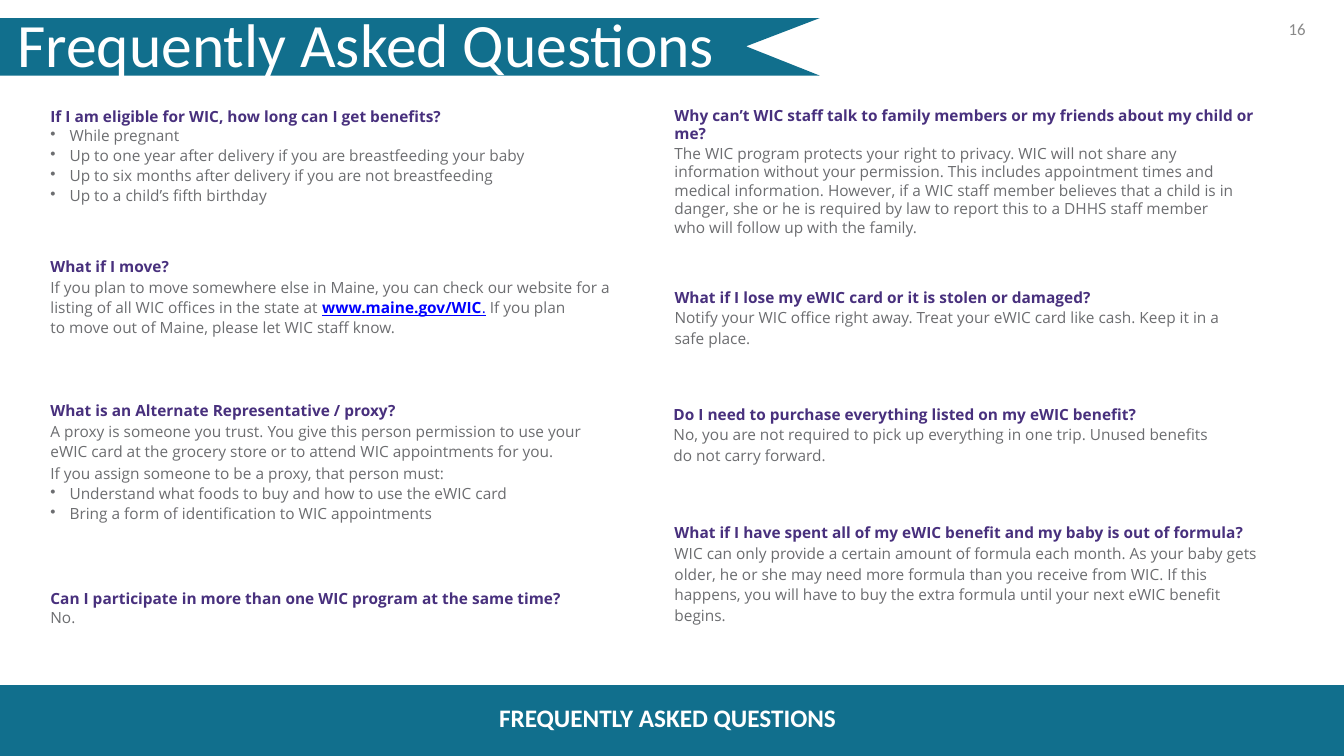
import pptx
import pptx.util
import pptx.dml.color
import pptx.enum.text
from lxml import etree
from dataclasses import dataclass

Inches, Pt = pptx.util.Inches, pptx.util.Pt


@dataclass(frozen=True)
class Theme:
    teal: str = "116F8D"
    purple: str = "48307D"
    gray: str = "6C6D70"
    number_gray: str = "898989"
    white: str = "FFFFFF"
    link_blue: str = "0000FF"
    display_font: str = "Calibri"
    text_font: str = "Open Sans"
    title_size: float = 44
    footer_size: float = 18
    number_size: float = 12
    text_size: float = 11


THEME = Theme()
LINK = "www.maine.gov/WIC"
HEADING, BODY, BULLET = "heading", "body", "bullet"

# Each answer: left, top, width, height, top inset, then paragraphs of
# (kind, space before, line spacing, text); \v marks a line break.
ANSWERS = [
    (0.49, 1.03, 4.96, 1.01, 0.03, [
        (HEADING, 1.9, None, "If I am eligible for WIC, how long can I get benefits?"),
        (BULLET, 0.9, None, "While pregnant"),
        (BULLET, 0.9, None, "Up to one year after delivery if you are breastfeeding your baby"),
        (BULLET, 1.1, None, "Up to six months after delivery if you are not breastfeeding"),
        (BULLET, 0.9, None, "Up to a child’s fifth birthday"),
    ]),
    (0.49, 2.52, 5.72, 0.83, 0.03, [
        (HEADING, 1.9, None, "What if I move?"),
        (BODY, 0.3, Pt(14.6), "If you plan to move somewhere else in Maine, you can check our website "
                              f"for a listing of all WIC offices in the state at {LINK}. If you plan"),
        (BODY, 1.1, None, "to move out of Maine, please let WIC staff know."),
    ]),
    (0.49, 3.95, 5.7, 1.25, 0.03, [
        (HEADING, 1.9, None, "What is an Alternate Representative / proxy?"),
        (BODY, 0.5, Pt(14.4), "A proxy is someone you trust. You give this person permission to use your\v"
                              "eWIC card at the grocery store or to attend WIC appointments for you."),
        (BODY, 2.2, None, "If you assign someone to be a proxy, that person must:"),
        (BULLET, 1.6, None, "Understand what foods to buy and how to use the eWIC card"),
        (BULLET, 0.9, None, "Bring a form of identification to WIC appointments"),
    ]),
    (0.49, 5.81, 5.17, 0.42, 0.03, [
        (HEADING, 1.9, None, "Can I participate in more than one WIC program at the same time?"),
        (BODY, 0.9, None, "No."),
    ]),
    (6.68, 1.04, 5.93, 1.33, 0.01, [
        (HEADING, 1.1, None, "Why can’t WIC staff talk to family members or my friends about my child or\vme?"),
        (BODY, 0.9, None, "The WIC program protects your right to privacy. WIC will not share any\v"
                          "information without your permission. This includes appointment times and\v"
                          "medical information. However, if a WIC staff member believes that a child is in\v"
                          "danger, she or he is required by law to report this to a DHHS staff member\v"
                          "who will follow up with the family."),
    ]),
    (6.68, 2.83, 5.78, 0.63, 0.03, [
        (HEADING, 1.9, None, "What if I lose my eWIC card or it is stolen or damaged?"),
        (BODY, 0.9, None, "Notify your WIC office right away. Treat your eWIC card like cash. Keep it in a"),
        (BODY, 2, None, "safe place."),
    ]),
    (6.67, 3.99, 5.6, 0.63, 0.03, [
        (HEADING, 1.9, None, "Do I need to purchase everything listed on my eWIC benefit?"),
        (BODY, 0.9, None, "No, you are not required to pick up everything in one trip. Unused benefits"),
        (BODY, 2, None, "do not carry forward."),
    ]),
    (6.68, 5.15, 5.96, 1.06, 0.02, [
        (HEADING, 1.2, 1.12, "What if I have spent all of my eWIC benefit and my baby is out of formula?"),
        (BODY, 0, 1.12, "WIC can only provide a certain amount of formula each month. As your baby gets\v"
                        "older, he or she may need more formula than you receive from WIC. If this\v"
                        "happens, you will have to buy the extra formula until your next eWIC benefit\v"
                        "begins."),
    ]),
]

RIBBON = [(8.13, 0.75), (7.4, 0.46), (8.13, 0.18), (0, 0.18), (0, 0.75)]
FOOTER_BAND = [(13.33, 6.8), (0, 6.8), (0, 7.5), (13.33, 7.5)]


def rgb(color):
    return pptx.dml.color.RGBColor.from_string(color)


def add_outline(slide, points):
    corners = [(Inches(x), Inches(y)) for x, y in points]
    builder = slide.shapes.build_freeform(*corners[0], scale=1.0)
    builder.add_line_segments(corners[1:], close=True)
    shape = builder.convert_to_shape()
    shape.shadow.inherit = False
    shape.fill.solid()
    shape.fill.fore_color.rgb = rgb(THEME.teal)
    shape.line.fill.background()


def add_run(para, text, size, font, color, bold=False, underline=False):
    span = para.add_run()
    span.text = text
    span.font.size = Pt(size)
    span.font.name = font
    span.font.bold = bold
    span.font.underline = underline
    span.font.color.rgb = rgb(color)


def set_frame(box, top_inset=0.01):
    frame = box.text_frame
    frame.word_wrap = True
    frame.auto_size = pptx.enum.text.MSO_AUTO_SIZE.NONE
    frame.vertical_anchor = pptx.enum.text.MSO_ANCHOR.TOP
    frame.margin_left = frame.margin_right = frame.margin_bottom = 0
    frame.margin_top = Inches(top_inset)
    return frame


def set_paragraph(para, space_before, line_spacing=None, bullet=False):
    para.alignment = pptx.enum.text.PP_ALIGN.LEFT
    para.space_before = Pt(space_before)
    if line_spacing:
        para.line_spacing = line_spacing
    properties = para._p.get_or_add_pPr()
    properties.set("marL", str(Inches(0.2 if bullet else 0.01)))
    properties.set("indent", str(Inches(-0.19 if bullet else 0)))
    if bullet:
        mark = etree.SubElement(properties, pptx.oxml.ns.qn("a:buChar"))
        mark.set("char", "•")


def add_label(box, text, size, color, bold=False):
    para = set_frame(box).paragraphs[0]
    set_paragraph(para, 1)
    add_run(para, text, size, THEME.display_font, color, bold)


def add_text(para, kind, text):
    """Fill a paragraph, honouring line breaks and styling the web address."""
    size, font = THEME.text_size, THEME.text_font
    heading = kind == HEADING
    color = THEME.purple if heading else THEME.gray
    for index, line in enumerate(text.split("\v")):
        if index:
            para.add_line_break()
        before, link, after = line.partition(LINK)
        add_run(para, before, size, font, color, heading)
        if link:
            add_run(para, link, size, font, THEME.link_blue, True, True)
            add_run(para, after[0], size, font, THEME.link_blue, False, True)
            add_run(para, after[1:], size, font, color)


def add_answer(slide, left, top, width, height, inset, paragraphs):
    box = slide.shapes.add_textbox(*map(Inches, (left, top, width, height)))
    frame = set_frame(box, inset)
    for index, (kind, space_before, line_spacing, text) in enumerate(paragraphs):
        para = frame.add_paragraph() if index else frame.paragraphs[0]
        set_paragraph(para, space_before, line_spacing, kind == BULLET)
        add_text(para, kind, text)


def main():
    deck = pptx.Presentation()
    deck.slide_width, deck.slide_height = Inches(13.33), Inches(7.5)
    page = deck.slides.add_slide(deck.slide_layouts.get_by_name("Title Only"))

    add_outline(page, RIBBON)
    add_outline(page, FOOTER_BAND)

    title = page.shapes.title
    title.left, title.top, title.width, title.height = map(Inches, (0.16, 0.05, 9.8, 0.76))
    add_label(title, "Frequently Asked Questions", THEME.title_size, THEME.white)
    page.shapes._spTree.append(title._element)  # bring the title in front of the ribbon

    number = page.shapes.add_textbox(*map(Inches, (12.77, 0.18, 0.2, 0.22)))
    add_label(number, "16", THEME.number_size, THEME.number_gray)
    footer = page.shapes.add_textbox(*map(Inches, (4.94, 6.96, 3.4, 0.33)))
    add_label(footer, "FREQUENTLY ASKED QUESTIONS", THEME.footer_size, THEME.white, True)

    for answer in ANSWERS:
        add_answer(page, *answer)
    deck.save("out.pptx")


if __name__ == "__main__":
    main()
